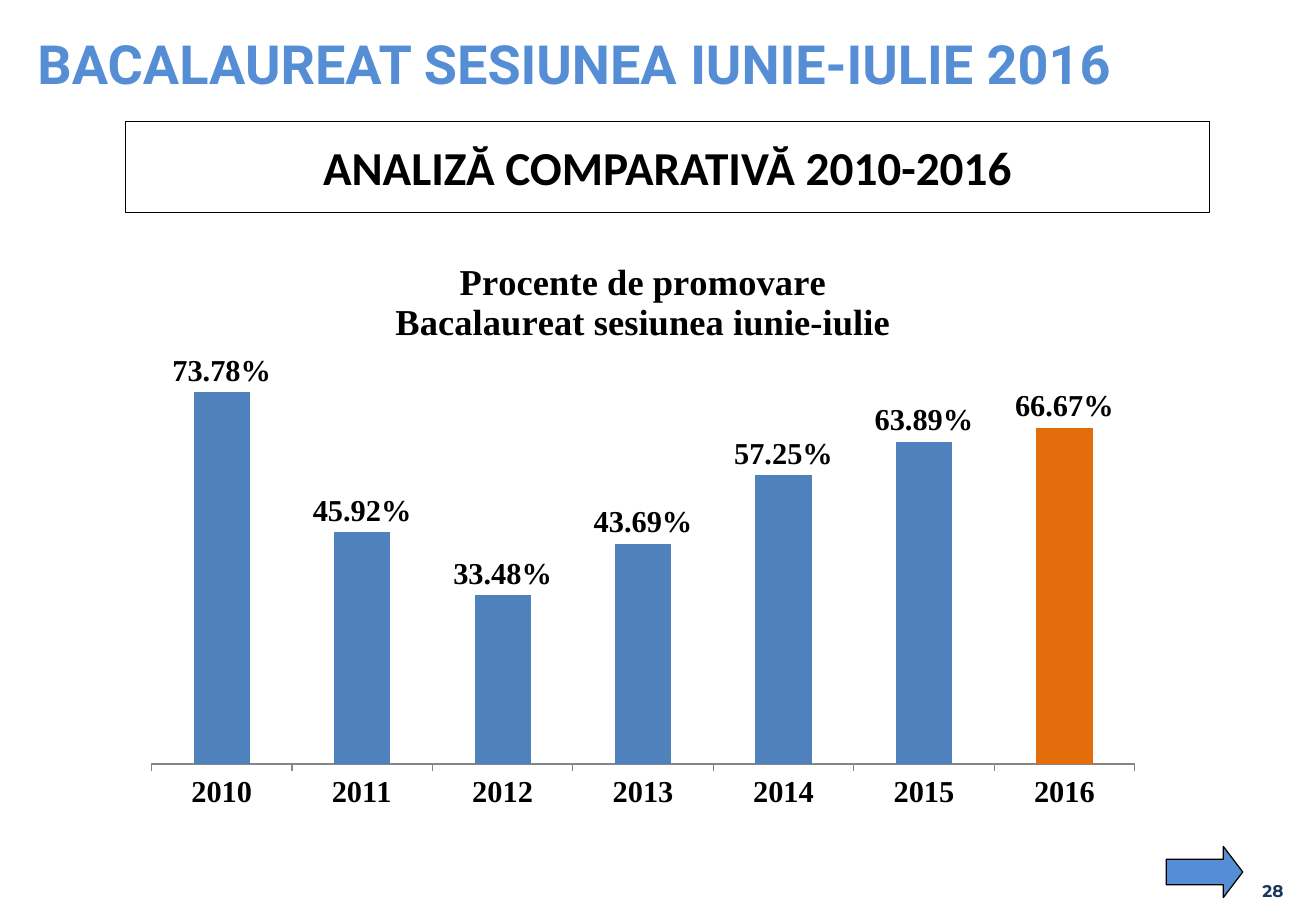
from lxml import etree
from pptx import Presentation
from pptx.chart.data import CategoryChartData
from pptx.dml.color import RGBColor
from pptx.enum.chart import XL_CHART_TYPE, XL_LABEL_POSITION, XL_TICK_MARK
from pptx.enum.shapes import MSO_SHAPE
from pptx.enum.text import MSO_ANCHOR, PP_ALIGN
from pptx.oxml.ns import qn
from pptx.util import Cm, Pt

COLORS = {"sky": "558ED5", "navy": "17365C", "black": "000000",
          "bar": "4F81BD", "latest": "E46C0A", "axis": "868686"}
PASS_RATES = {"2010": 0.7378, "2011": 0.4592, "2012": 0.3348, "2013": 0.4369,
              "2014": 0.5725, "2015": 0.6389, "2016": 0.6667}
PLOT_AREA = {"x": 0.02, "y": 0.21, "w": 0.96, "h": 0.69}


def rgb(name):
    return RGBColor.from_string(COLORS[name])


def style_font(font, family, size, color):
    font.name, font.size, font.bold = family, Pt(size), True
    font.color.rgb = rgb(color)


def place_plot(chart, fractions):
    """Fix the inner plot area as fractions of the chart frame."""
    plot_area = chart.element.find(".//" + qn("c:plotArea"))
    for old_layout in plot_area.findall(qn("c:layout")):
        plot_area.remove(old_layout)
    layout = etree.Element(qn("c:layout"))
    plot_area.insert(0, layout)
    manual = etree.SubElement(layout, qn("c:manualLayout"))
    settings = {"layoutTarget": "inner", "xMode": "edge", "yMode": "edge", **fractions}
    for tag, value in settings.items():
        etree.SubElement(manual, qn("c:" + tag)).set("val", str(value))


class SlideBuilder:
    def __init__(self, presentation):
        self.slide = presentation.slides.add_slide(presentation.slide_layouts[5])
        self.chart_font = "Times New Roman"

    def fill_text(self, frame, text, family, size, color, align, anchor, inset):
        frame.margin_left = frame.margin_right = Cm(inset[0])
        frame.margin_top = frame.margin_bottom = Cm(inset[1])
        frame.vertical_anchor = anchor
        frame.text = text
        paragraph = frame.paragraphs[0]
        paragraph.alignment = align
        style_font(paragraph.font, family, size, color)

    def title(self, text, box):
        heading = self.slide.shapes.title
        heading.left, heading.top, heading.width, heading.height = map(Cm, box)
        self.fill_text(heading.text_frame, text, "Roboto", 32, "sky",
                       PP_ALIGN.LEFT, MSO_ANCHOR.TOP, (0.25, 0.13))
        heading.text_frame.word_wrap = False

    def outlined_shape(self, kind, box, fill=None):
        shape = self.slide.shapes.add_shape(kind, *map(Cm, box))
        shape.shadow.inherit = False
        if fill:
            shape.fill.solid()
            shape.fill.fore_color.rgb = rgb(fill)
        else:
            shape.fill.background()
        shape.line.color.rgb = rgb("black")
        shape.line.width = Pt(0.75)
        return shape

    def banner(self, text, box):
        frame = self.outlined_shape(MSO_SHAPE.RECTANGLE, box).text_frame
        self.fill_text(frame, text, "Calibri", 28, "black",
                       PP_ALIGN.CENTER, MSO_ANCHOR.MIDDLE, (0.13, 0.13))

    def next_arrow(self, box):
        arrow = self.outlined_shape(MSO_SHAPE.RIGHT_ARROW, box, "sky")
        arrow.adjustments[1] = 0.38

    def page_number(self, text, box):
        frame = self.slide.shapes.add_textbox(*map(Cm, box)).text_frame
        frame.word_wrap = True
        self.fill_text(frame, text, "Montserrat", 10, "navy",
                       PP_ALIGN.RIGHT, MSO_ANCHOR.BOTTOM, (0, 0))

    def column_chart(self, heading, rates, box):
        """Draw one column per year, with the last one highlighted."""
        data = CategoryChartData(number_format="0.00%")
        data.categories = list(rates)
        data.add_series("Series 1", list(rates.values()))
        chart = self.slide.shapes.add_chart(
            XL_CHART_TYPE.COLUMN_CLUSTERED, *map(Cm, box), data).chart
        style_font(chart.font, self.chart_font, 18, "black")
        chart.has_legend = False
        chart.has_title = True
        chart.chart_title.include_in_layout = False
        chart.chart_title.text_frame.text = heading
        for line in chart.chart_title.text_frame.paragraphs:
            style_font(line.font, self.chart_font, 21.6, "black")

        values = chart.value_axis
        values.minimum_scale, values.maximum_scale = 0, 0.8
        values.has_major_gridlines = False
        values.visible = False
        years = chart.category_axis
        years.major_tick_mark = XL_TICK_MARK.OUTSIDE
        years.format.line.color.rgb = rgb("axis")
        style_font(years.tick_labels.font, self.chart_font, 18, "black")

        plot = chart.plots[0]
        plot.gap_width = 150
        plot.vary_by_categories = False
        series = plot.series[0]
        latest = series.points[len(rates) - 1]
        for bar, color in ((series, "bar"), (latest, "latest")):
            bar.format.fill.solid()
            bar.format.fill.fore_color.rgb = rgb(color)
        labels = series.data_labels
        labels.show_value = True
        labels.number_format = "0.00%"
        labels.number_format_is_linked = False
        labels.position = XL_LABEL_POSITION.OUTSIDE_END
        style_font(labels.font, self.chart_font, 18, "black")
        place_plot(chart, PLOT_AREA)


def main():
    presentation = Presentation()
    presentation.slide_width, presentation.slide_height = Cm(27.51), Cm(19.05)
    builder = SlideBuilder(presentation)
    builder.page_number("28", (24.54, 17.83, 2.29, 1.02))
    builder.title("BACALAUREAT SESIUNEA IUNIE-IULIE 2016", (0.53, 0.51, 25.78, 1.6))
    builder.banner("ANALIZĂ COMPARATIVĂ 2010-2016", (2.62, 2.54, 22.66, 1.9))
    builder.next_arrow((24.38, 17.7, 1.6, 1.07))
    builder.column_chart("Procente de promovare\nBacalaureat sesiunea iunie-iulie",
                         PASS_RATES, (2.74, 4.98, 21.41, 12.22))
    presentation.save("out.pptx")


if __name__ == "__main__":
    main()
